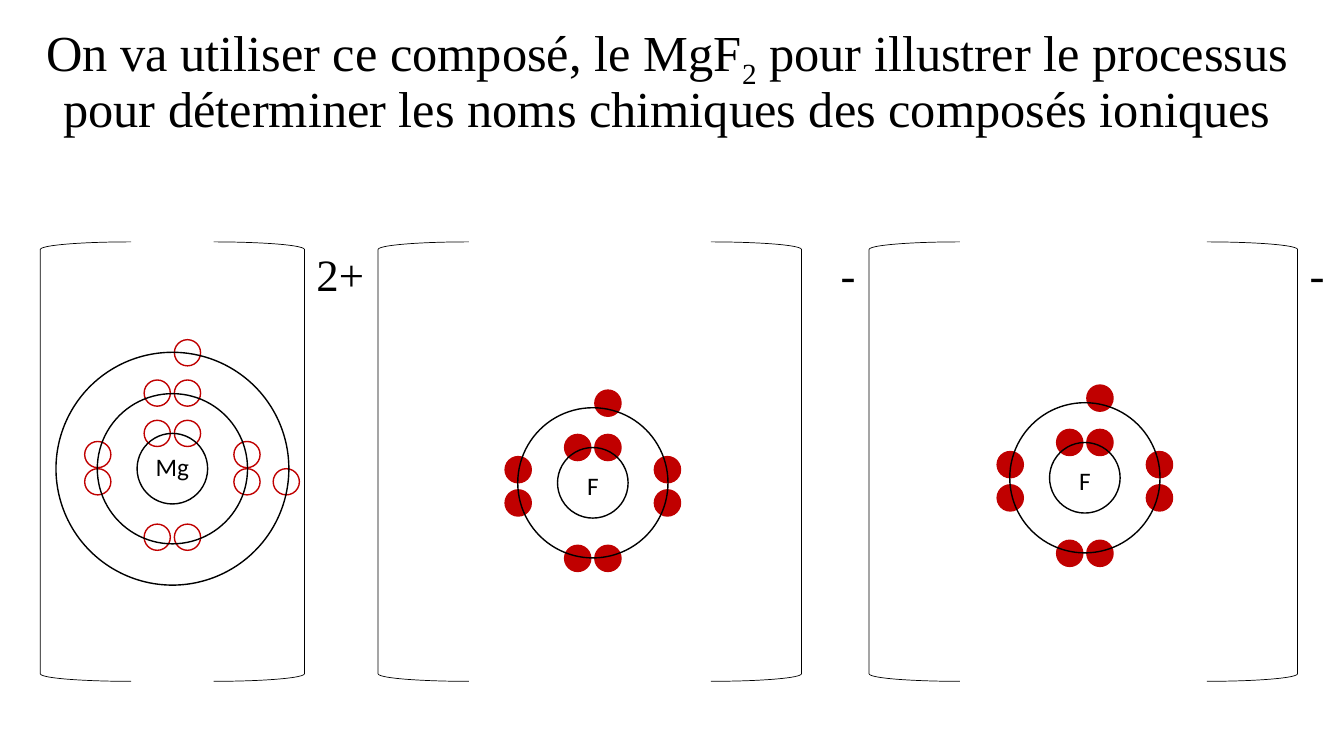
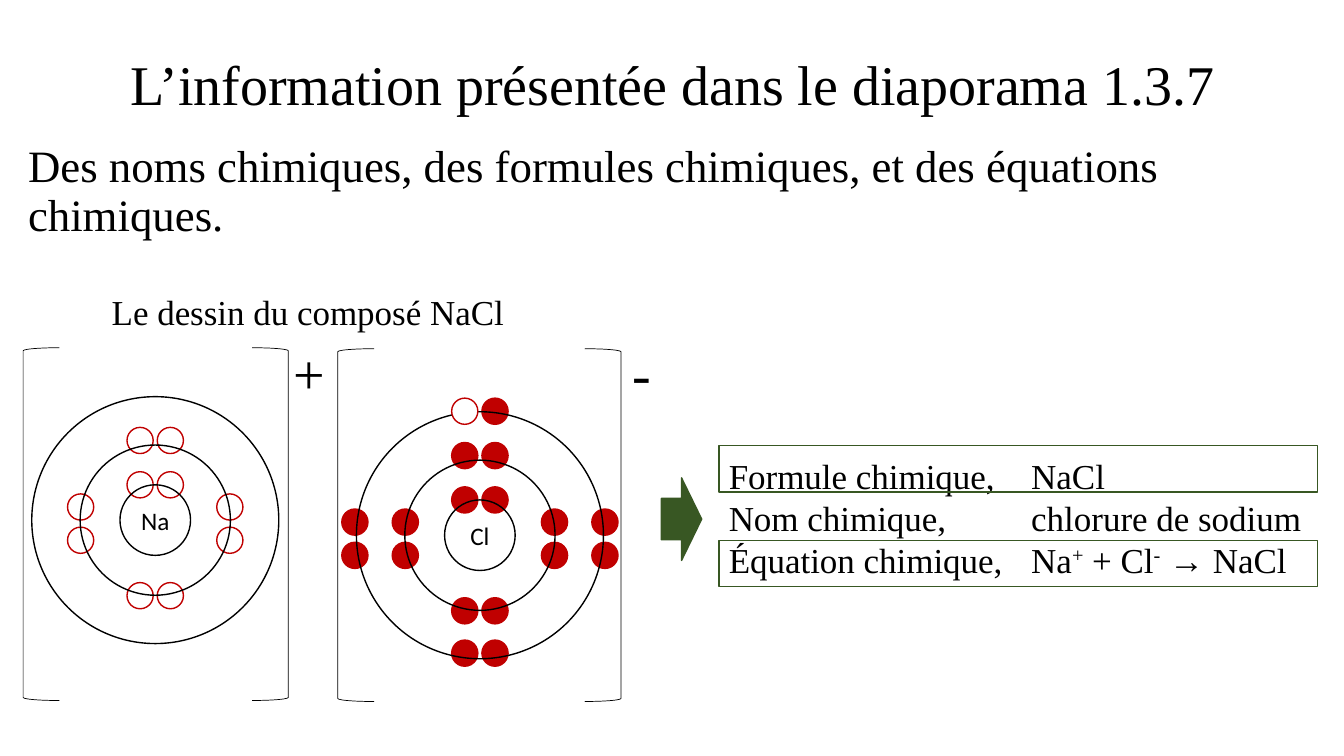
from lxml import etree
from pptx import Presentation
from pptx import util as u
from pptx.dml.color import RGBColor
from pptx.enum import shapes, text
from pptx.oxml.ns import qn

BLACK, WHITE, RED, GREEN = "000000", "FFFFFF", "C00000", "385723"
SERIF, SANS = "Times New Roman", "Calibri"
KIND = shapes.MSO_SHAPE
DOT, CORE, RING = 0.26, 0.7, 1.49


def paint(target, color):
    """Give a font, or a fill made solid, a hex colour."""
    target.rgb = RGBColor.from_string(color)


def draw(slide, kind, box, line, fill=None, width=1):
    """Add a preset shape with an outline and an optional fill."""
    shape = slide.shapes.add_shape(kind, *map(u.Inches, box))
    shape.shadow.inherit = False
    if fill:
        shape.fill.solid()
        paint(shape.fill.fore_color, fill)
    else:
        shape.fill.background()
    paint(shape.line.color, line)
    shape.line.width = u.Pt(width)
    return shape


def write(slide, box, paras, size, font=SERIF, align="LEFT", anchor="TOP",
          wrap=False, space=None, tab=None):
    """Add a text box; each paragraph lists strings or (string, baseline)."""
    frame = slide.shapes.add_textbox(*map(u.Inches, box)).text_frame
    frame.word_wrap = wrap
    frame.vertical_anchor = getattr(text.MSO_ANCHOR, anchor)
    for i, runs in enumerate(paras):
        para = frame.add_paragraph() if i else frame.paragraphs[0]
        if tab:
            stops = etree.SubElement(para._p.get_or_add_pPr(), qn("a:tabLst"))
            etree.SubElement(stops, qn("a:tab"), pos=str(u.Inches(tab)), algn="l")
        para.alignment = getattr(text.PP_ALIGN, align)
        if space:
            para.line_spacing = space
        for part in runs:
            words, base = (part, 0) if isinstance(part, str) else part
            run = para.add_run()
            run.text = words
            run.font.name, run.font.size = font, u.Pt(size)
            paint(run.font.color, BLACK)
            if base:
                run._r.get_or_add_rPr().set("baseline", str(base * 1000))


def title(slide, box, runs, size):
    """Add the centred slide title."""
    write(slide, box, [runs], size, align="CENTER", anchor="MIDDLE",
          wrap=True, space=0.9)


def circle(slide, x, y, size, line, fill=None):
    """Add a circle around a centre."""
    draw(slide, KIND.OVAL, (x - size / 2, y - size / 2, size, size), line, fill)


def shell(top, low, side, high, down):
    """Return the eight electron places of a shell around its centre."""
    pairs = [(x, y) for y in (top, low) for x in (-0.15, 0.15)]
    return pairs + [(x, y) for x in (-side, side) for y in (high, down)]


INNER = [(-0.15, -0.35), (0.15, -0.35)]
SECOND = shell(-0.79, 0.75, 0.74, -0.13, 0.2)
THIRD = shell(-1.23, 1.17, 1.24, -0.13, 0.2)
TIGHT = shell(-0.75, 0.68, 0.74, -0.14, 0.13)


def atom(slide, x, y, name, dots, fill, outer=None, drop=0):
    """Draw an atom around its centre: symbol, electrons, then shells."""
    write(slide, (x - 0.3, y - 0.2 + drop, 0.6, 0.4), [[name]], 18,
          font=SANS, align="CENTER")
    for dx, dy in dots:
        circle(slide, x + dx, y + dy, DOT, RED, fill)
    for size in filter(None, (CORE, RING, outer)):
        circle(slide, x, y, size, BLACK)


def ion(slide, box, arm, charge, size, spot):
    """Draw the brackets along a box and the charge in its own spot."""
    left, top, wide, high = box
    for kind, x in ((KIND.LEFT_BRACKET, left),
                    (KIND.RIGHT_BRACKET, left + wide - arm)):
        draw(slide, kind, (x, top, arm, high), BLACK, width=0.5)
    write(slide, spot, [[charge]], size)


def fluoride(slide):
    """Build the slide with the magnesium fluoride ions."""
    title(slide, (0.07, 0.07, 13.1, 1.45),
          ["On va utiliser ce composé, le MgF", ("2", -25),
           " pour illustrer le processus pour déterminer les noms chimiques "
           "des composés ioniques"], 36)
    atom(slide, 1.71, 4.65, "Mg", INNER + TIGHT + [(0.15, -1.15), (1.13, 0.13)],
         WHITE, outer=2.31, drop=-0.02)
    for x, y in ((5.88, 4.79), (10.76, 4.74)):
        atom(slide, x, y, "F", INNER + SECOND[1:], RED, drop=0.03)
    for left, wide, charge, spot, room in (
            (0.4, 2.62, "2+", 3.04, 0.68),
            (3.75, 4.2, "-", 8.24, 0.35),
            (8.62, 4.25, "-", 12.89, 0.35)):
        ion(slide, (left, 2.4, wide, 4.36), 0.9, charge, 32,
            (spot, 2.4, room, 0.64))


def facts(slide, left, top, wide):
    """Write the name, formula and equation, with two framed bands."""
    write(slide, (left, top + 0.04, wide, 1.36),
          [["Formule chimique,\tNaCl"],
           ["Nom chimique,\tchlorure de sodium"],
           ["Équation chimique,\tNa", ("+", 30), " + Cl", ("-", 30), " → NaCl"]],
          25, tab=3)
    for y in (top, top + 0.94):
        draw(slide, KIND.RECTANGLE, (left, y, wide, 0.46), GREEN)


def chloride(slide):
    """Build the slide with the sodium chloride ions and their names."""
    title(slide, (0.18, 0.14, 12.98, 1.45),
          ["L’information présentée dans le diaporama 1.3.7"], 40)
    write(slide, (0.18, 1.38, 12.98, 1.55),
          [["Des noms chimiques, des formules chimiques, et des équations "
            "chimiques."]], 32, wrap=True, space=0.9)
    write(slide, (1.01, 2.83, 4.14, 0.52), [["Le dessin du composé NaCl"]], 25)
    atom(slide, 1.54, 5.16, "Na", INNER + SECOND, WHITE, outer=2.45)
    x, y = 4.76, 5.31
    atom(slide, x, y, "Cl", INNER + SECOND + THIRD[1:], RED, outer=2.45)
    dx, dy = THIRD[0]
    circle(slide, x + dx, y + dy, DOT, RED, WHITE)
    ion(slide, (0.23, 3.45, 2.63, 3.5), 0.36, "+", 40, (2.81, 3.31, 0.52, 0.77))
    ion(slide, (3.35, 3.46, 2.81, 3.5), 0.36, "-", 40, (6.17, 3.31, 0.39, 0.77))
    draw(slide, KIND.RIGHT_ARROW, (6.56, 4.74, 0.4, 0.82), GREEN, GREEN)
    facts(slide, 7.13, 4.42, 5.94)


def main():
    """Build and save the deck."""
    deck = Presentation()
    deck.slide_width, deck.slide_height = u.Inches(13.33), u.Inches(7.5)
    for build in (fluoride, chloride):
        build(deck.slides.add_slide(deck.slide_layouts[6]))
    deck.save("out.pptx")


if __name__ == "__main__":
    main()
